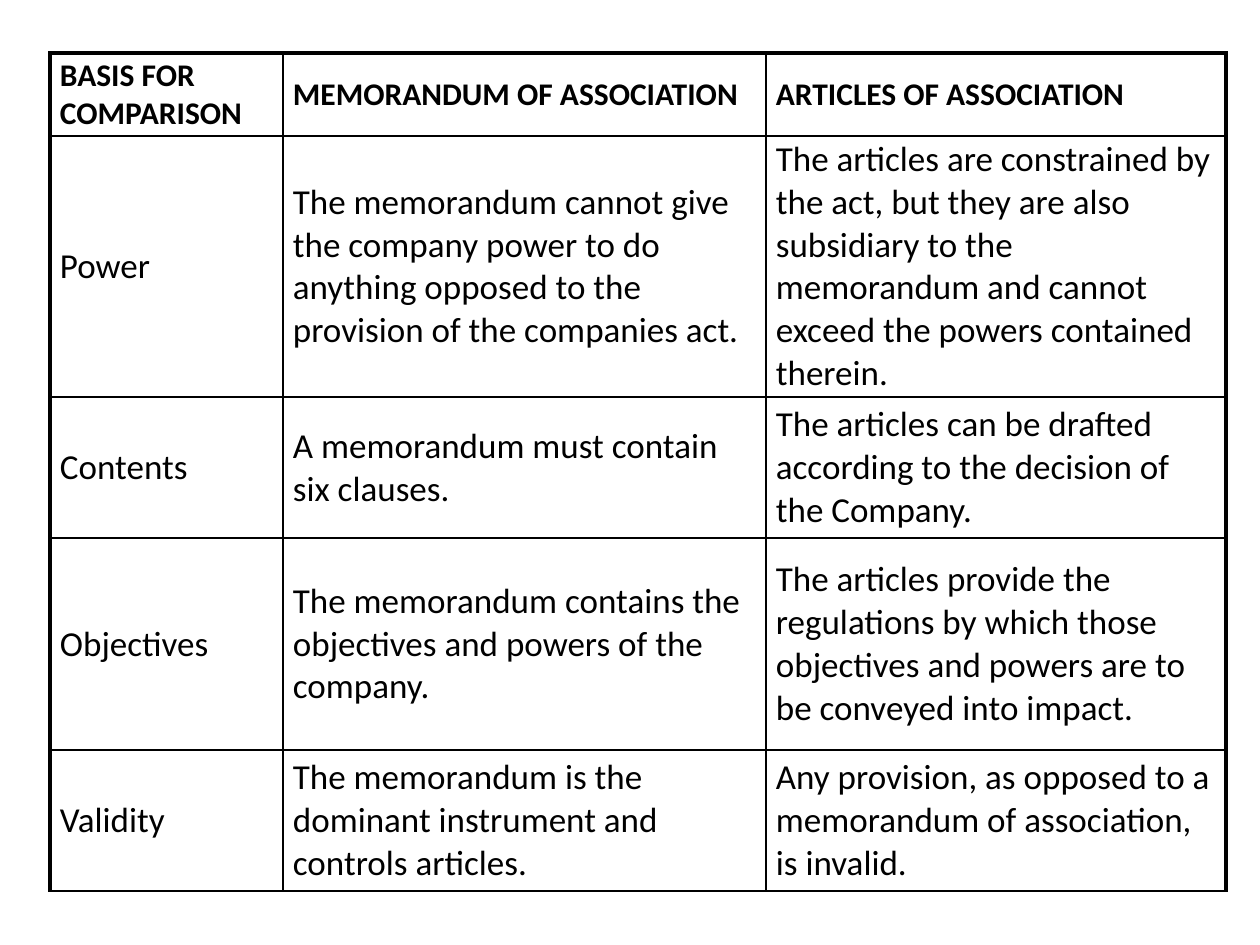
"""Build a slide comparing the memorandum and the articles of association."""
from dataclasses import dataclass

from lxml import etree
from pptx import Presentation
from pptx.dml.color import RGBColor
from pptx.enum.text import MSO_ANCHOR
from pptx.oxml.ns import qn
from pptx.util import Emu, Pt

MIDDLE = MSO_ANCHOR.MIDDLE
PX = 914400 // 126
BLACK = "000000"
THIN, THICK = 1, 2.25
TABLE_LEFT, TABLE_TOP = 50, 53
COLUMN_WIDTHS = (233, 483, 460)


@dataclass
class Row:
    """One table row: its height in px and its three texts."""
    height: int
    basis: str
    memorandum: str
    articles: str


ROWS = [
    Row(83, "BASIS FOR COMPARISON", "MEMORANDUM OF ASSOCIATION", "ARTICLES OF ASSOCIATION"),
    Row(199, "Power",
        "The memorandum cannot give the company power to do anything opposed to "
        "the provision of the companies act.",
        "The articles are constrained by the act, but they are also subsidiary to "
        "the memorandum and cannot exceed the powers contained therein."),
    Row(141, "Contents", "A memorandum must contain six clauses.",
        "The articles can be drafted according to the decision of the Company."),
    Row(212, "Objectives",
        "The memorandum contains the objectives and powers of the company.",
        "The articles provide the regulations by which those objectives and powers "
        "are to be conveyed into impact."),
    Row(141, "Validity",
        "The memorandum is the dominant instrument and controls articles.",
        "Any provision, as opposed to a memorandum of association, is invalid."),
]


def px(length: int) -> Emu:
    """Turn px into EMU."""
    return Emu(length * PX)


def color(value: str) -> RGBColor:
    """Turn a hex string into a colour."""
    return RGBColor.from_string(value)


def write(cell, text: str, *, size: int, bold: bool = False) -> None:
    """Put formatted text into a table cell."""
    cell.vertical_anchor = MIDDLE
    cell.margin_left = cell.margin_right = px(10)
    cell.margin_top = cell.margin_bottom = px(2)
    span = cell.text_frame.paragraphs[0].add_run()
    span.text = text
    span.font.name = "Calibri"
    span.font.size = Pt(size)
    span.font.bold = bold
    span.font.color.rgb = color(BLACK)


def draw_borders(cell, **widths: float) -> None:
    """Draw cell borders, each keyed by its side letter, with widths in points."""
    properties = cell._tc.get_or_add_tcPr()
    for side, width in widths.items():
        line = etree.SubElement(properties, qn(f"a:ln{side}"), w=str(int(Pt(width))))
        fill = etree.SubElement(line, qn("a:solidFill"))
        etree.SubElement(fill, qn("a:srgbClr"), val=BLACK)


def draw_table(page, rows: list[Row]) -> None:
    """Draw the comparison table with a heavier frame."""
    height = sum(row.height for row in rows)
    table = page.shapes.add_table(
        len(rows), len(COLUMN_WIDTHS), px(TABLE_LEFT), px(TABLE_TOP),
        px(sum(COLUMN_WIDTHS)), px(height)).table
    table.first_row = table.horz_banding = False
    for column, width in zip(table.columns, COLUMN_WIDTHS):
        column.width = px(width)
    last = len(COLUMN_WIDTHS) - 1
    for r, row in enumerate(rows):
        table.rows[r].height = px(row.height)
        header = r == 0
        for c, text in enumerate((row.basis, row.memorandum, row.articles)):
            cell = table.cell(r, c)
            write(cell, text, size=18 if header else 20, bold=header)
            draw_borders(cell, L=THICK if c == 0 else THIN, R=THICK if c == last else THIN,
                         T=THICK if header else THIN, B=THIN)
            cell.fill.background()


def main() -> None:
    """Build and save the deck."""
    deck = Presentation()
    deck.slide_width, deck.slide_height = px(1260), px(945)
    page = deck.slides.add_slide(deck.slide_layouts[6])
    draw_table(page, ROWS)
    deck.save("out.pptx")


if __name__ == "__main__":
    main()
